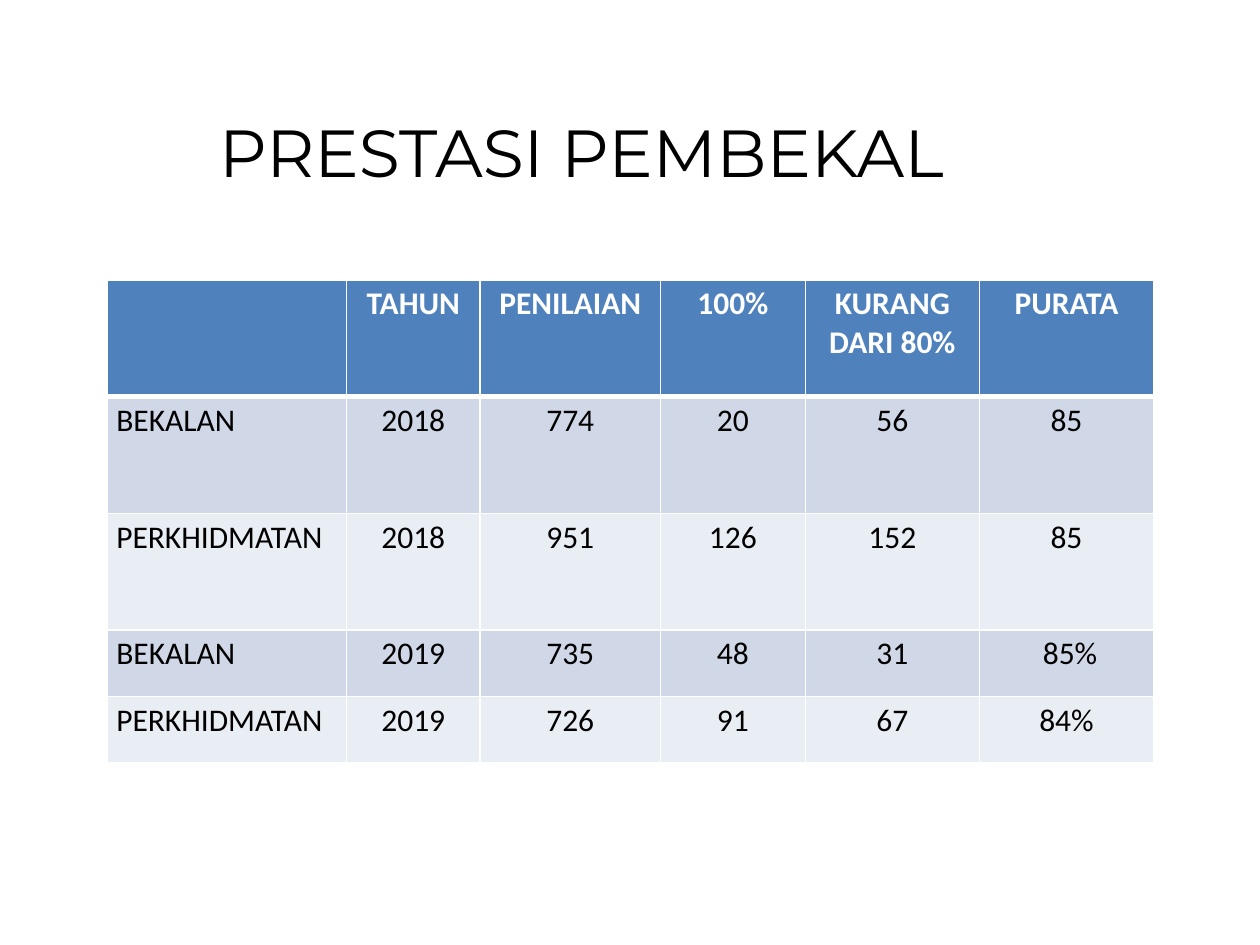
import pptx
import pptx.util
import pptx.dml.color
import pptx.enum.text
import pptx.oxml

Pt = pptx.util.Pt
Align = pptx.enum.text.PP_ALIGN
Anchor = pptx.enum.text.MSO_ANCHOR

TITLE = "PRESTASI PEMBEKAL"
ROWS = [
    ["", "TAHUN", "PENILAIAN", "100%", "KURANG DARI 80%", "PURATA"],
    ["BEKALAN", "2018", "774", "20", "56", "85"],
    ["PERKHIDMATAN", "2018", "951", "126", "152", "85"],
    ["BEKALAN", "2019", "735", "48", "31", " 85%"],
    ["PERKHIDMATAN", "2019", "726", "91", "67", "84%"],
]
WIDTHS = [136.8, 76.4, 103, 82.8, 99.5, 99.5]
HEIGHTS = [66.7, 66.7, 66.7, 38, 38]
COLORS = {"head": "4F81BD", "odd": "D0D8E8", "even": "E9EDF4",
          "white": "FFFFFF", "black": "000000"}
HEAD = {"name": "Calibri", "size": Pt(18), "bold": True}
BODY = {**HEAD, "bold": False}
BIG = {"name": "Montserrat", "size": Pt(38), "bold": False}
INSETS = {"margin_left": Pt(5.25), "margin_right": Pt(5.25),
          "margin_top": Pt(2.75), "margin_bottom": Pt(2.75)}
FRAME = {"word_wrap": True, "vertical_anchor": Anchor.TOP}


def style(item, values):
    for key, value in values.items():
        setattr(item, key, value)


def color(name):
    return pptx.dml.color.RGBColor.from_string(COLORS[name])


def write(frame, text, font, ink, align):
    para = frame.paragraphs[0]
    para.alignment = align
    run = para.add_run()
    run.text = text
    style(run.font, font)
    run.font.color.rgb = color(ink)


def border(cell, row):
    sides = {"L": 1, "R": 1, "T": 3 if row == 1 else 1, "B": 3 if row == 0 else 1}
    props = cell._tc.get_or_add_tcPr()
    for side, width in sides.items():
        props.append(pptx.oxml.parse_xml(
            f'<a:ln{side} xmlns:a="http://schemas.openxmlformats.org/drawingml/2006/main" '
            f'w="{Pt(width)}"><a:solidFill><a:srgbClr val="{COLORS["white"]}"/>'
            f'</a:solidFill></a:ln{side}>'))


def main():
    deck = pptx.Presentation()
    style(deck, {"slide_width": Pt(720), "slide_height": Pt(540)})
    slide = deck.slides.add_slide(deck.slide_layouts[6])

    title = slide.shapes.add_textbox(Pt(33.1), Pt(59.8), Pt(598.3), Pt(68.4))
    style(title.text_frame, FRAME)
    write(title.text_frame, TITLE, BIG, "black", Align.CENTER)

    table = slide.shapes.add_table(
        len(ROWS), len(WIDTHS), Pt(61.2), Pt(160),
        Pt(sum(WIDTHS)), Pt(sum(HEIGHTS))).table
    for col, width in zip(table.columns, WIDTHS):
        col.width = Pt(width)
    for line, height in zip(table.rows, HEIGHTS):
        line.height = Pt(height)

    for r, row in enumerate(ROWS):
        fill = "head" if r == 0 else "odd" if r % 2 else "even"
        font, ink = (HEAD, "white") if r == 0 else (BODY, "black")
        for c, text in enumerate(row):
            cell = table.cell(r, c)
            style(cell, INSETS)
            border(cell, r)
            cell.fill.solid()
            cell.fill.fore_color.rgb = color(fill)
            if text:
                align = Align.CENTER if c else Align.LEFT
                write(cell.text_frame, text, font, ink, align)

    deck.save("out.pptx")


if __name__ == "__main__":
    main()
